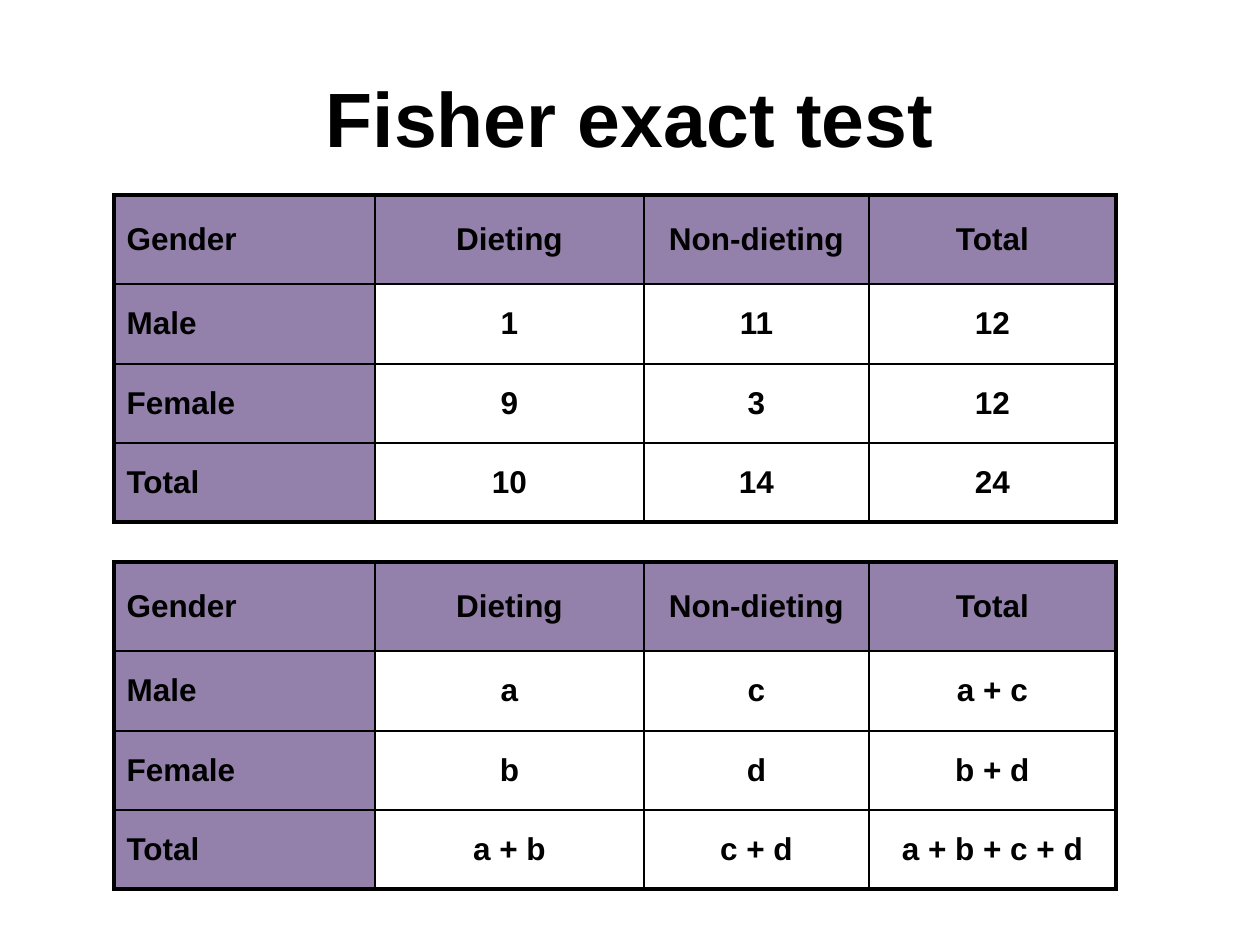
from lxml.etree import SubElement
from pptx import Presentation
from pptx.dml.color import RGBColor
from pptx.enum.text import MSO_ANCHOR, PP_ALIGN
from pptx.oxml import parse_xml
from pptx.oxml.ns import nsdecls, qn
from pptx.util import Pt

TITLE = "Fisher exact test"
HEADINGS = ["Gender", "Dieting", "Non-dieting", "Total"]
COUNTS = [
    HEADINGS,
    ["Male", "1", "11", "12"],
    ["Female", "9", "3", "12"],
    ["Total", "10", "14", "24"],
]
SYMBOLS = [
    HEADINGS,
    ["Male", "a", "c", "a + c"],
    ["Female", "b", "d", "b + d"],
    ["Total", "a + b", "c + d", "a + b + c + d"],
]
TABLES = [(195, COUNTS), (562, SYMBOLS)]
TABLE_LEFT = 114
COLUMN_WIDTHS = [261, 269, 225, 247]
ROW_HEIGHTS = [89, 80, 79, 79]
PURPLE, BLACK = "9481AB", "000000"
OUTER, INNER = 2.25, 1


def px(length):
    """Turn px into EMU."""
    return round(length * 914400 / 126)


def color(value):
    """Turn a hex string into a colour."""
    return RGBColor.from_string(value)


def write(frame, text, size, alignment):
    """Write one bold black line and return its paragraph."""
    paragraph = frame.paragraphs[0]
    paragraph.alignment = alignment
    run = paragraph.add_run()
    run.text = text
    run.font.name = "Arial"
    run.font.size = Pt(size)
    run.font.bold = True
    run.font.color.rgb = color(BLACK)
    return paragraph


def set_borders(cell, edges):
    """Draw the left, right, top and bottom borders, thicker on the table's edges."""
    properties = cell._tc.get_or_add_tcPr()
    for position, (side, is_edge) in enumerate(zip("LRTB", edges)):
        width = Pt(OUTER if is_edge else INNER)
        properties.insert(position, parse_xml(
            f'<a:ln{side} {nsdecls("a")} w="{width}"><a:solidFill>'
            f'<a:srgbClr val="{BLACK}"/></a:solidFill></a:ln{side}>'))


def add_contingency_table(slide, top, rows):
    """Add a table with purple headings and a thick frame."""
    last_row, last_column = len(rows) - 1, len(HEADINGS) - 1
    table = slide.shapes.add_table(
        len(rows), len(HEADINGS), px(TABLE_LEFT), px(top),
        px(sum(COLUMN_WIDTHS)), px(sum(ROW_HEIGHTS))).table
    table.first_row = table.horz_banding = False
    for column, width in zip(table.columns, COLUMN_WIDTHS):
        column.width = px(width)
    for row, height in zip(table.rows, ROW_HEIGHTS):
        row.height = px(height)
    for r, row in enumerate(rows):
        for c, text in enumerate(row):
            cell = table.cell(r, c)
            cell.vertical_anchor = MSO_ANCHOR.MIDDLE
            if r == 0 or c == 0:
                cell.fill.solid()
                cell.fill.fore_color.rgb = color(PURPLE)
            else:
                cell.fill.background()
            set_borders(cell, (c == 0, c == last_column, r == 0, r == last_row))
            alignment = PP_ALIGN.CENTER if c else PP_ALIGN.LEFT
            paragraph = write(cell.text_frame, text, 18, alignment)
            spacing = SubElement(paragraph._p.get_or_add_pPr(), qn("a:spcBef"))
            SubElement(spacing, qn("a:spcPct"), val="20000")


def main():
    """Build the slide."""
    deck = Presentation()
    deck.slide_width, deck.slide_height = px(1260), px(945)
    slide = deck.slides.add_slide(deck.slide_layouts[6])
    for top, rows in TABLES:
        add_contingency_table(slide, top, rows)
    title = slide.shapes.add_textbox(px(63), px(38), px(1134), px(157)).text_frame
    title.word_wrap = True
    title.vertical_anchor = MSO_ANCHOR.MIDDLE
    write(title, TITLE, 44, PP_ALIGN.CENTER)
    deck.save("out.pptx")


if __name__ == "__main__":
    main()
